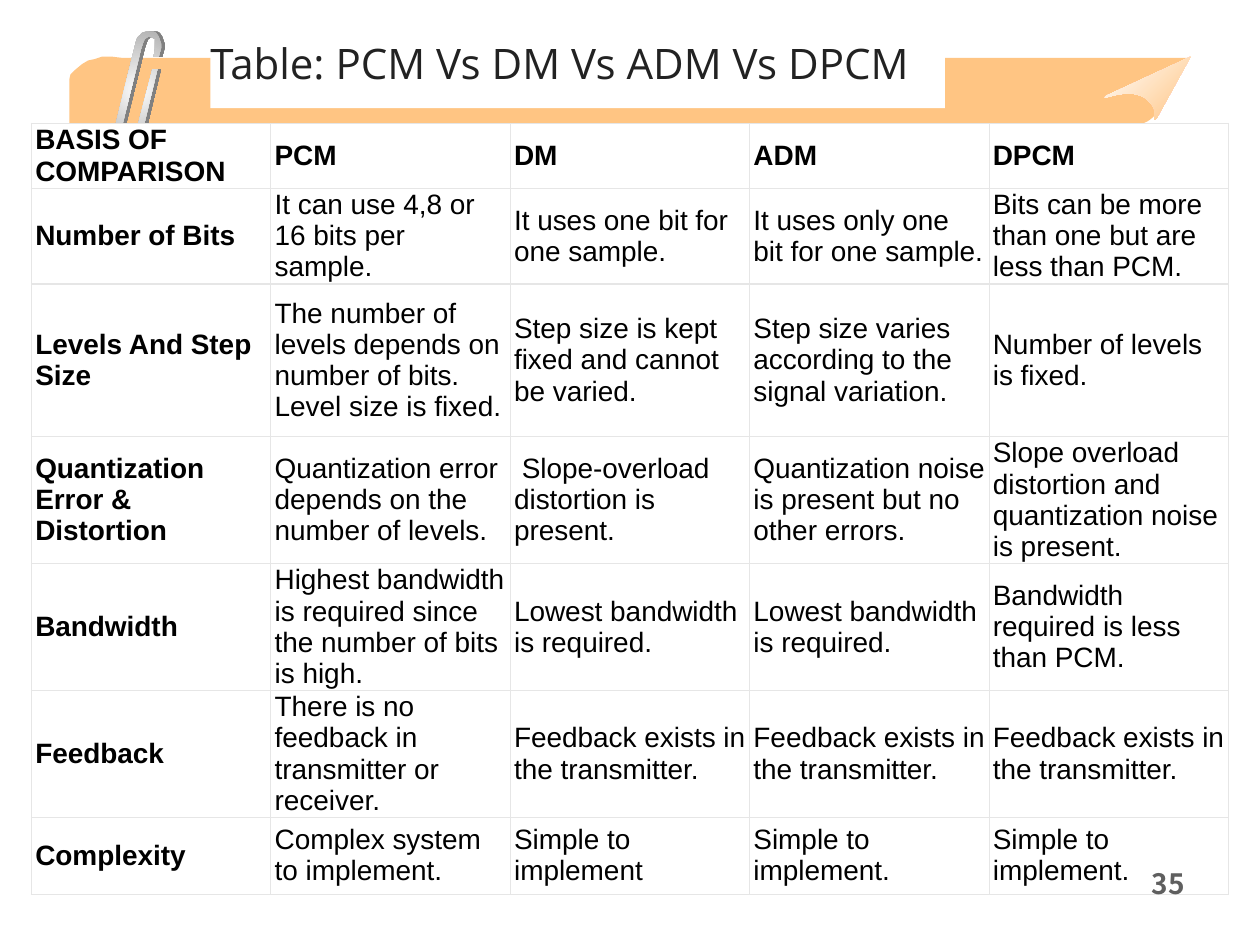
from lxml.etree import SubElement
from pptx import Presentation
from pptx.dml.color import RGBColor
from pptx.enum.shapes import MSO_SHAPE
from pptx.enum.text import MSO_ANCHOR, PP_ALIGN
from pptx.oxml import parse_xml
from pptx.oxml.ns import nsdecls, qn
from pptx.util import Inches, Pt

ORANGE, WHITE, BLACK = "FFC583", "FFFFFF", "000000"

# Outlines: a pair is a line end, six numbers are a Bezier curve
BANNER = [(0.55, 0.99), (8.99, 0.99), (9.06, 0.98, 9.1, 0.99, 9.18, 0.9),
          (9.44, 0.46), (0.97, 0.46), (0.89, 0.45), (0.81, 0.45), (0.75, 0.47),
          (0.7, 0.48), (0.65, 0.51), (0.59, 0.56), (0.56, 0.59), (0.55, 0.63)]
FOLD = [(9.45, 0.45), (9.18, 0.94), (9.12, 0.99, 9.23, 0.88, 9.09, 0.78),
        (8.95, 0.68, 8.71, 0.82, 8.78, 0.76)]
CLIP = [(1.21, 0.55), (1.25, 0.55), (1.12, 1.09), (1.11, 1.11), (1.09, 1.14),
        (1.06, 1.16), (1.03, 1.18), (0.98, 1.16), (0.95, 1.15), (0.94, 1.14),
        (0.91, 1.1), (0.91, 1.02), (1.08, 0.33), (1.09, 0.3), (1.11, 0.28),
        (1.13, 0.26), (1.16, 0.25), (1.22, 0.25), (1.24, 0.26), (1.26, 0.29),
        (1.27, 0.32), (1.28, 0.35), (1.28, 0.38), (1.26, 0.45), (1.22, 0.45),
        (1.23, 0.39), (1.23, 0.31), (1.21, 0.3), (1.18, 0.29), (1.15, 0.31),
        (1.14, 0.33), (1.13, 0.36), (1.12, 0.39), (0.96, 1.04), (0.95, 1.08),
        (0.96, 1.1), (0.99, 1.12), (1.05, 1.12), (1.07, 1.08), (1.08, 1.05)]

ROW_HEIGHTS = [0.49, 0.73, 1.21, 0.97, 0.97, 0.85, 0.61]
ROWS = [
    ["BASIS OF COMPARISON", "PCM", "DM", "ADM", "DPCM"],
    ["Number of Bits", "It can use 4,8 or 16 bits per sample.",
     "It uses one bit for one sample.", "It uses only one bit for one sample.",
     "Bits can be more than one but are less than PCM."],
    ["Levels And Step Size",
     "The number of levels depends on number of bits. Level size is fixed.",
     "Step size is kept fixed and cannot be varied.",
     "Step size varies according to the signal variation.",
     "Number of levels is fixed."],
    ["Quantization Error & Distortion",
     "Quantization error depends on the number of levels.",
     " Slope-overload distortion is present.",
     "Quantization noise is present but no other errors.",
     "Slope overload distortion and quantization noise is present."],
    ["Bandwidth",
     "Highest bandwidth is required since the number of bits is high.",
     "Lowest bandwidth is required.", "Lowest bandwidth is required.",
     "Bandwidth required is less than PCM."],
    ["Feedback", "There is no feedback in transmitter or receiver.",
     "Feedback exists in the transmitter.", "Feedback exists in the transmitter.",
     "Feedback exists in the transmitter."],
    ["Complexity", "Complex system to implement.", "Simple to implement",
     "Simple to implement.", "Simple to implement."],
]


def rgb(color):
    return RGBColor.from_string(color)


def trace(outline, steps=12):
    """Turn an outline into points, sampling its curves."""
    points = []
    for part in outline:
        if len(part) == 2:
            points.append(part)
            continue
        nodes = [points[-1], part[:2], part[2:4], part[4:]]
        for t in (i / steps for i in range(1, steps + 1)):
            weights = ((1 - t) ** 3, 3 * t * (1 - t) ** 2, 3 * t * t * (1 - t), t ** 3)
            points.append(tuple(sum(w * n[axis] for w, n in zip(weights, nodes))
                                for axis in (0, 1)))
    return [(Inches(x), Inches(y)) for x, y in points]


class SlideBuilder:
    def __init__(self, slide, border="E6E6E6"):
        self.s = slide
        self.border = border

    def add_text(self, tf, text, size, font, color, bold=False, align=PP_ALIGN.LEFT):
        p = tf.paragraphs[0]
        p.alignment = align
        r = p.add_run()
        r.text = text
        r.font.size, r.font.name, r.font.bold = Pt(size), font, bold
        r.font.color.rgb = rgb(color)

    def margins(self, target, left, top, bottom):
        target.margin_left = target.margin_right = Inches(left)
        target.margin_top, target.margin_bottom = Inches(top), Inches(bottom)

    def paint(self, sp, *colors):
        sp.shadow.inherit = False
        sp.line.fill.background()
        if len(colors) == 1:
            sp.fill.solid()
            sp.fill.fore_color.rgb = rgb(colors[0])
            return
        sp.fill.gradient()
        sp.fill.gradient_angle = 315
        for stop, color, position in zip(sp.fill.gradient_stops, colors, (0, 1)):
            stop.color.rgb = rgb(color)
            stop.position = position

    def freeform(self, outline, *colors):
        start, *rest = trace(outline)
        builder = self.s.shapes.build_freeform(*start, scale=1.0)
        builder.add_line_segments(rest, close=True)
        sp = builder.convert_to_shape()
        self.paint(sp, *colors)
        return sp

    def radial(self, sp):
        lin = next(sp._element.spPr.iter(qn("a:lin")))
        lin.getparent().replace(lin, parse_xml(
            f'<a:path {nsdecls("a")} path="circle">'
            '<a:fillToRect l="50000" t="50000" r="50000" b="50000"/></a:path>'))

    def drop_shadow(self, sp, color, distance):
        effects = sp._element.spPr.find(qn("a:effectLst"))
        shadow = SubElement(effects, qn("a:outerShdw"), dist=str(Pt(distance)), dir="0")
        SubElement(shadow, qn("a:srgbClr"), val=color)

    def cell(self, cell, text, bold):
        cell.fill.solid()
        cell.fill.fore_color.rgb = rgb(WHITE)
        cell.vertical_anchor = MSO_ANCHOR.MIDDLE
        self.margins(cell, 0.03, 0.01, 0.01)
        self.add_text(cell.text_frame, text, 16, "Arial", BLACK, bold)
        for i, side in enumerate("LRTB"):
            cell._tc.tcPr.insert(i, parse_xml(
                f'<a:ln{side} {nsdecls("a")} w="{Pt(0.75)}"><a:solidFill>'
                f'<a:srgbClr val="{self.border}"/></a:solidFill></a:ln{side}>'))

    def table(self, x, y, w, heights, rows):
        frame = self.s.shapes.add_table(len(rows), len(rows[0]), Inches(x), Inches(y),
                                        Inches(w), Inches(sum(heights)))
        table = frame.table
        table.horz_banding = False
        for i, (height, row) in enumerate(zip(heights, rows)):
            table.rows[i].height = Inches(height)
            for j, text in enumerate(row):
                self.cell(table.cell(i, j), text, bold=i == 0 or j == 0)

    def page_number(self, x, y, w, h, text):
        tf = self.s.shapes.add_textbox(*map(Inches, (x, y, w, h))).text_frame
        tf.word_wrap = True
        self.add_text(tf, text, 16, "Noto Sans CJK KR", "5F5F5F", True, PP_ALIGN.RIGHT)

    def title(self, x, y, w, h, text):
        sp = self.s.shapes.add_shape(MSO_SHAPE.RECTANGLE, *map(Inches, (x, y, w, h)))
        self.paint(sp, WHITE)
        tf = sp.text_frame
        tf.word_wrap = True
        tf.vertical_anchor = MSO_ANCHOR.MIDDLE
        self.margins(tf, 0, 0.23, 0.16)
        self.add_text(tf, text, 24, "Open Sans", "222222")


def main():
    prs = Presentation()
    prs.slide_width, prs.slide_height = Inches(10), Inches(7.5)
    page = SlideBuilder(prs.slides.add_slide(prs.slide_layouts[6]))

    # Banner with folded corner and paper clip
    page.freeform(BANNER, ORANGE)
    page.freeform(FOLD, WHITE, ORANGE)
    clip = page.freeform(CLIP, "FCFCFC", "B2B2B2")
    page.radial(clip)
    page.drop_shadow(clip, "808080", 2)

    # Comparison table
    page.table(0.25, 0.98, 9.5, ROW_HEIGHTS, ROWS)

    # Page number and title
    page.page_number(7.17, 6.83, 2.33, 0.52, "35")
    page.title(1.67, 0.06, 5.83, 0.8, "Table: PCM Vs DM Vs ADM Vs DPCM")

    prs.save("out.pptx")


if __name__ == "__main__":
    main()
